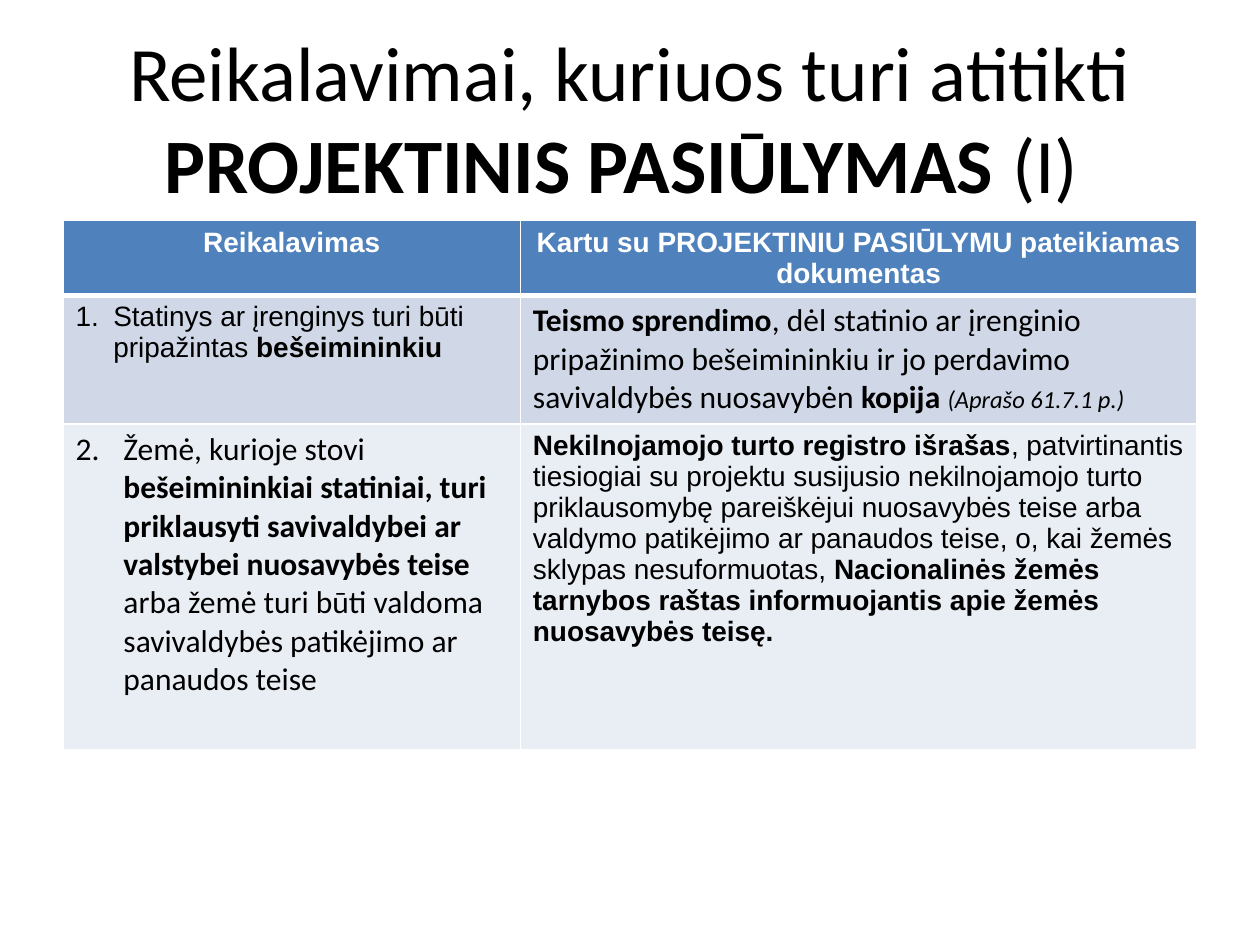
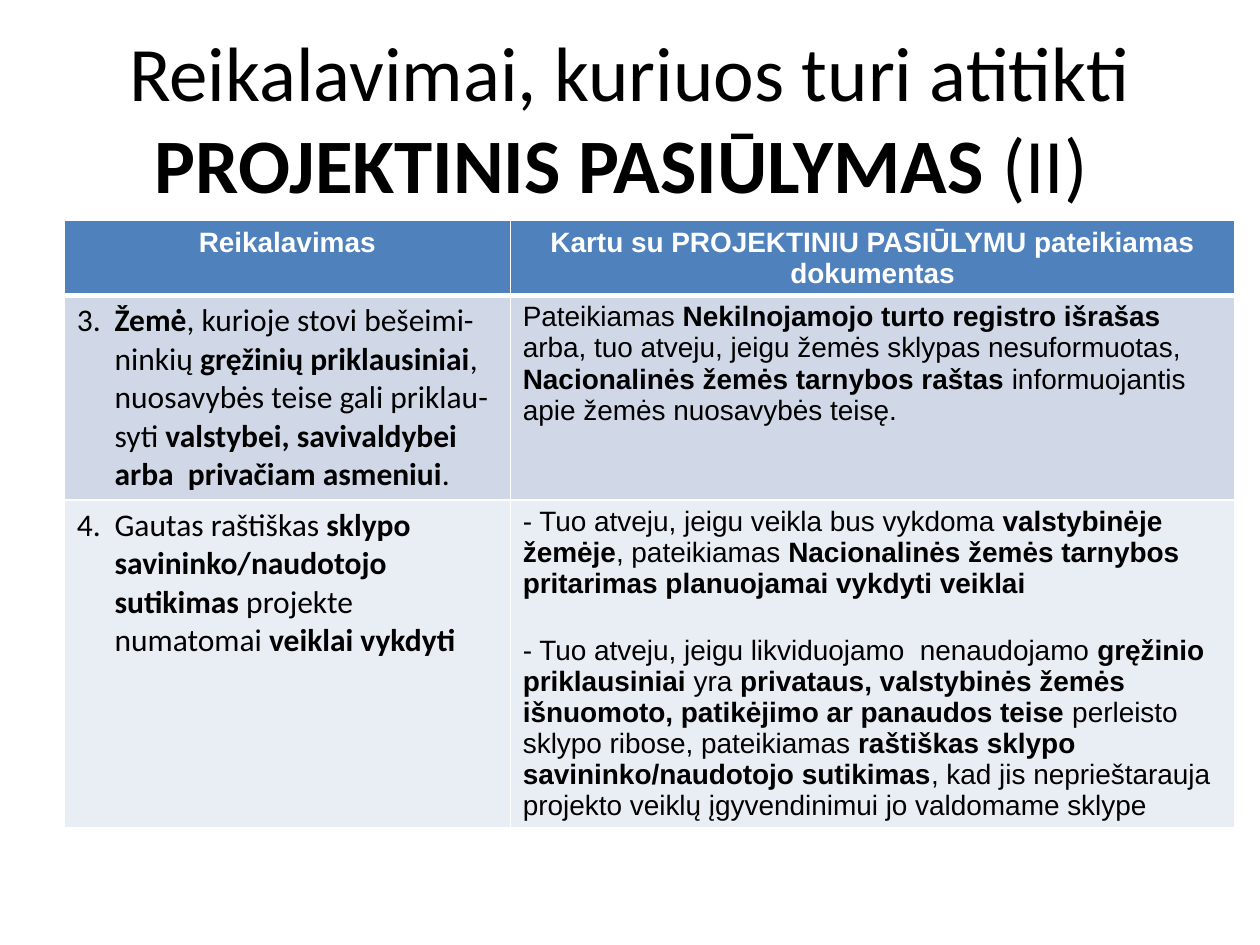
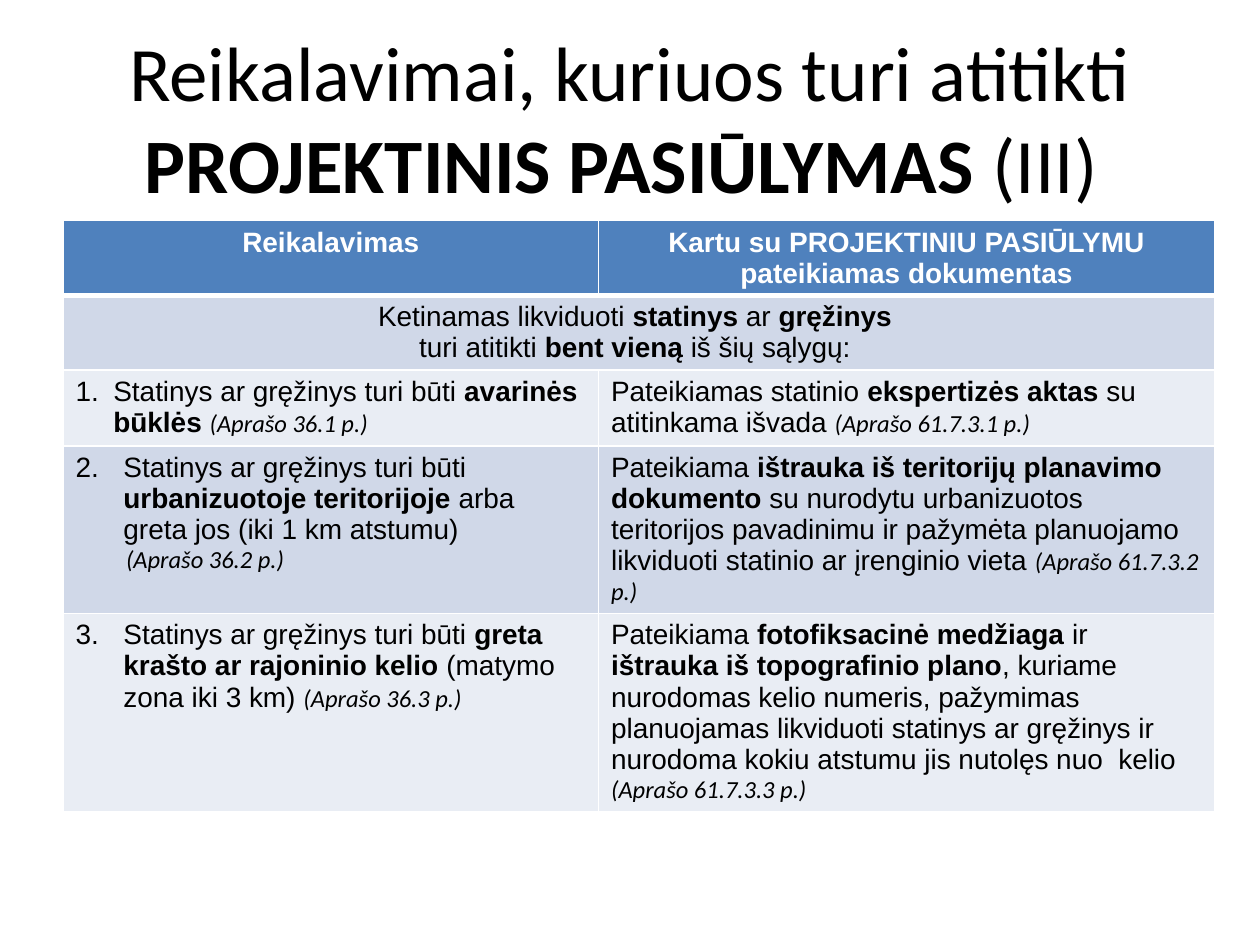
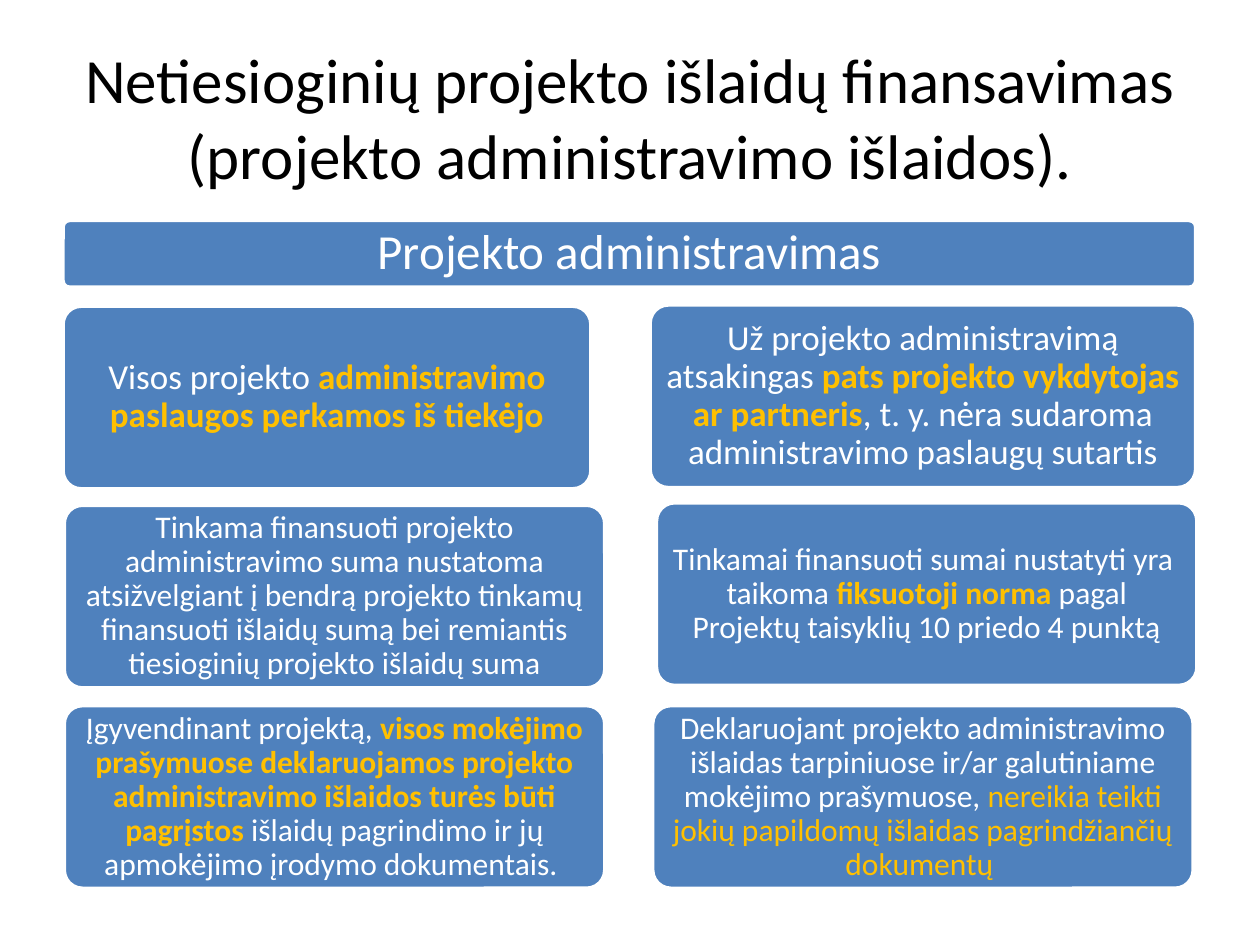
from dataclasses import dataclass
from itertools import zip_longest

from lxml.etree import SubElement
from pptx import Presentation
from pptx.dml.color import RGBColor
from pptx.enum.shapes import MSO_SHAPE
from pptx.enum.text import MSO_ANCHOR, MSO_AUTO_SIZE, PP_ALIGN
from pptx.oxml.ns import qn
from pptx.util import Inches, Pt

BLUE, GOLD, WHITE, BLACK = "4F81BD", "FFC000", "FFFFFF", "000000"
BANDS = ("D0D8E8", "E9EDF4")
HEADS = ("Reikalavimas", "Kartu su PROJEKTINIU PASIŪLYMU pateikiamas dokumentas")
HEAD_H = 0.58


@dataclass
class Para:
    """Cell text: |bold| parts, then an optional ^reference in small italics."""
    text: str
    font: str = "Arial"
    size: int = 16
    left: float = 0
    hang: float = 0
    start: int = 0
    before: int = 0
    align: PP_ALIGN = PP_ALIGN.LEFT


def wide(text, **more):
    return Para(text, "Calibri", 18, **more)


def typed(text, make=Para):
    """Item whose number is part of the text, set off with a tab."""
    return make(text, left=0.3, hang=0.3)


def auto(text, start, make=Para):
    return make(text, left=0.38, hang=0.38, start=start)


def mid(text):
    return Para(text, align=PP_ALIGN.CENTER)


def color(text):
    return RGBColor.from_string(text)


def style(font, name, size, tint):
    font.name, font.size = name, Pt(size)
    font.color.rgb = color(tint)


def add_runs(para, text, tint=None, bold=True):
    """Add the text, stressing every second part between bars."""
    for i, part in enumerate(text.split("|")):
        if not part:
            continue
        run = para.add_run()
        run.text = part
        if i % 2:
            run.font.bold = bold
            if tint:
                run.font.color.rgb = color(tint)


def add_title(slide, text, size=44):
    title = slide.shapes.title
    title.left, title.top = Inches(0.5), Inches(0.3)
    title.width, title.height = Inches(9), Inches(1.25)
    frame = title.text_frame
    frame.word_wrap, frame.auto_size = True, MSO_AUTO_SIZE.NONE
    frame.vertical_anchor = MSO_ANCHOR.MIDDLE
    para = frame.paragraphs[0]
    para.alignment = PP_ALIGN.CENTER
    style(para.font, "Calibri", size, BLACK)
    add_runs(para, text)


def write(para, item, tint):
    props = para._p.get_or_add_pPr()
    if item.left:
        props.set("marL", str(Inches(item.left)))
        props.set("indent", str(-Inches(item.hang)))
    if item.start:
        SubElement(props, qn("a:buAutoNum"), type="arabicPeriod",
                   startAt=str(item.start))
    para.alignment = item.align
    if item.before:
        para.space_before = Pt(item.before)
    style(para.font, item.font, item.size, tint)
    body, _, note = item.text.partition("^")
    add_runs(para, body)
    if note:
        run = para.add_run()
        run.text = note
        run.font.name, run.font.size = "Calibri", Pt(14)
        run.font.italic = True


def paint(cell, fill, top, low):
    """Give a cell white borders and a fill."""
    props = cell._tc.get_or_add_tcPr()
    for side, width in (("L", 1), ("R", 1), ("T", top), ("B", low)):
        line = SubElement(props, qn(f"a:ln{side}"), w=str(Pt(width)))
        solid = SubElement(line, qn("a:solidFill"))
        SubElement(solid, qn("a:srgbClr"), val=WHITE)
    cell.fill.solid()
    cell.fill.fore_color.rgb = color(fill)


def fill_cell(cell, items, tint):
    frame = cell.text_frame
    for i, item in enumerate(items):
        write(frame.add_paragraph() if i else frame.paragraphs[0], item, tint)


def add_table(slide, left, top, widths, rows):
    """Rows are (height, cells); a row with one cell spans both columns."""
    head = (HEAD_H, [[mid(f"|{text}|")] for text in HEADS])
    rows = [head, *rows]
    table = slide.shapes.add_table(
        len(rows), len(widths), Inches(left), Inches(top),
        Inches(sum(widths)), Inches(sum(row[0] for row in rows))).table
    for col, width in zip(table.columns, widths):
        col.width = Inches(width)
    for r, (height, cells) in enumerate(rows):
        table.rows[r].height = Inches(height)
        if len(cells) < len(widths):
            table.cell(r, 0).merge(table.cell(r, len(widths) - 1))
        for c, (_, items) in enumerate(zip_longest(widths, cells, fillvalue=())):
            cell = table.cell(r, c)
            fill = BANDS[(r - 1) % 2] if r else BLUE
            paint(cell, fill, 3 if r == 1 else 1, 1 if r else 3)
            fill_cell(cell, items, BLACK if r else WHITE)


def add_card(slide, box, text, size, inset, bold=True):
    card = slide.shapes.add_shape(MSO_SHAPE.ROUNDED_RECTANGLE, *map(Inches, box))
    card.adjustments[0] = 0.1
    card.shadow.inherit = False
    card.fill.solid()
    card.fill.fore_color.rgb = color(BLUE)
    card.line.color.rgb = color(WHITE)
    card.line.width = Pt(2)
    frame = card.text_frame
    frame.word_wrap, frame.vertical_anchor = True, MSO_ANCHOR.MIDDLE
    frame.margin_left = frame.margin_right = Inches(inset)
    frame.margin_top = frame.margin_bottom = Inches(inset)
    para = frame.paragraphs[0]
    para.alignment, para.line_spacing = PP_ALIGN.CENTER, 0.9
    style(para.font, "Calibri", size, WHITE)
    add_runs(para, text, GOLD, bold)


def need_slide(slide, part, left, widths, rows):
    add_title(slide, f"Reikalavimai, kuriuos turi atitikti |PROJEKTINIS PASIŪLYMAS |({part}) ")
    add_table(slide, left, 1.75, widths, rows)


def cost_slide(slide):
    add_title(slide, "Netiesioginių projekto išlaidų finansavimas "
              "(projekto administravimo išlaidos).", 36)
    add_card(slide, (0.5, 1.75, 8.99, 0.53), "Projekto administravimas", 28, 0.12)
    high = 1.45
    for left, top, width, size, text, bold in COSTS:
        add_card(slide, (left, top, width, high), text, size,
                 0.08 if size == 20 else 0.07, bold)


COSTS = (
    (0.5, 2.43, 4.19, 20,
     "Visos projekto |administravimo paslaugos perkamos iš tiekėjo", True),
    (0.51, 4.01, 4.29, 18,
     "Tinkama finansuoti projekto administravimo suma nustatoma atsižvelgiant "
     "į bendrą projekto tinkamų finansuoti išlaidų sumą bei remiantis "
     "tiesioginių projekto išlaidų suma", True),
    (0.51, 5.6, 4.29, 18,
     "Įgyvendinant projektą, |visos mokėjimo prašymuose deklaruojamos projekto "
     "administravimo išlaidos turės būti pagrįstos| išlaidų pagrindimo ir jų "
     "apmokėjimo įrodymo dokumentais. ", True),
    (5.16, 2.42, 4.33, 20,
     "Už projekto administravimą atsakingas |pats projekto vykdytojas ar "
     "partneris|, t. y. nėra sudaroma administravimo paslaugų sutartis", True),
    (5.21, 3.99, 4.29, 18,
     "Tinkamai finansuoti sumai nustatyti yra  taikoma |fiksuotoji norma |"
     "pagal Projektų taisyklių 10 priedo 4 punktą", True),
    (5.18, 5.6, 4.29, 18,
     "Deklaruojant projekto administravimo išlaidas tarpiniuose ir/ar "
     "galutiniame mokėjimo prašymuose, |nereikia teikti jokių papildomų "
     "išlaidas pagrindžiančių dokumentų ", False),
)

OWNER = (
    (1.02, [
        [typed("1.\tStatinys ar įrenginys turi būti pripažintas |bešeimininkiu")],
        [wide("|Teismo sprendimo|, dėl statinio ar įrenginio pripažinimo "
              "bešeimininkiu ir jo perdavimo savivaldybės nuosavybėn |kopija |"
              "^(Aprašo 61.7.1 p.)")]]),
    (2.59, [
        [auto("Žemė, kurioje stovi |bešeimininkiai statiniai, turi priklausyti "
              "savivaldybei ar valstybei nuosavybės teise |arba žemė turi būti "
              "valdoma savivaldybės patikėjimo ar panaudos teise", 2, wide)],
        [Para("|Nekilnojamojo turto registro išrašas|, patvirtinantis tiesiogiai "
              "su projektu susijusio nekilnojamojo turto priklausomybę "
              "pareiškėjui nuosavybės teise arba valdymo patikėjimo ar panaudos "
              "teise, o, kai žemės sklypas nesuformuotas, |Nacionalinės žemės "
              "tarnybos raštas informuojantis apie žemės nuosavybės teisę.")]]),
)

LAND = (
    (1.62, [
        [typed("3.\t|Žemė|, kurioje stovi bešeimi-ninkių |gręžinių "
               "priklausiniai|, nuosavybės teise gali priklau-syti |valstybei, "
               "savivaldybei arba  privačiam asmeniui|.", wide)],
        [Para("Pateikiamas |Nekilnojamojo turto registro išrašas| arba, tuo "
              "atveju, jeigu žemės sklypas nesuformuotas, |Nacionalinės žemės "
              "tarnybos raštas| informuojantis apie žemės nuosavybės teisę.")]]),
    (2.59, [
        [typed("4.\tGautas raštiškas |sklypo savininko/naudotojo sutikimas |"
               "projekte numatomai |veiklai vykdyti", wide)],
        [Para("- Tuo atveju, jeigu veikla bus vykdoma |valstybinėje žemėje|, "
              "pateikiamas |Nacionalinės žemės tarnybos pritarimas planuojamai "
              "vykdyti veiklai"),
         Para("- Tuo atveju, jeigu likviduojamo  nenaudojamo |gręžinio "
              "priklausiniai |yra |privataus, valstybinės žemės išnuomoto, "
              "patikėjimo ar panaudos teise| perleisto sklypo ribose, "
              "pateikiamas |raštiškas sklypo savininko/naudotojo sutikimas|, kad "
              "jis neprieštarauja projekto veiklų įgyvendinimui jo valdomame "
              "sklype", before=20)]]),
)

TERMS = (
    (0.59, [
        [mid("Ketinamas likviduoti |statinys| ar |gręžinys "),
         mid("turi atitikti |bent vieną |iš šių sąlygų: ")]]),
    (0.6, [
        [typed("1.\tStatinys ar gręžinys turi būti |avarinės būklės |^(Aprašo 36.1 p.)")],
        [Para("Pateikiamas statinio |ekspertizės aktas |su  atitinkama išvada "
              "^(Aprašo 61.7.3.1 p.)")]]),
    (1.33, [
        [auto("Statinys ar gręžinys turi būti |urbanizuotoje teritorijoje |arba "
              "greta jos (iki 1 km atstumu)", 2),
         Para("^(Aprašo 36.2 p.)", left=0.4)],
        [Para("Pateikiama |ištrauka iš teritorijų planavimo dokumento| su "
              "nurodytu urbanizuotos teritorijos pavadinimu ir pažymėta "
              "planuojamo likviduoti statinio ar įrenginio vieta "
              "^(Aprašo 61.7.3.2 p.)")]]),
    (1.57, [
        [auto("Statinys ar gręžinys turi būti |greta krašto ar rajoninio kelio |"
              "(matymo zona iki 3 km) ^(Aprašo 36.3 p.)", 3)],
        [Para("Pateikiama |fotofiksacinė medžiaga| ir |ištrauka iš topografinio "
              "plano|, kuriame nurodomas kelio numeris, pažymimas planuojamas "
              "likviduoti statinys ar gręžinys ir nurodoma kokiu atstumu jis "
              "nutolęs nuo  kelio"),
         Para("^(Aprašo 61.7.3.3 p.)")]]),
)


def main():
    deck = Presentation()
    deck.slide_width, deck.slide_height = Inches(10), Inches(7.5)
    plain = deck.slide_layouts[5]
    for part, left, widths, rows in (("I", 0.5, (3.63, 5.37), OWNER),
                                     ("II", 0.51, (3.54, 5.75), LAND),
                                     ("III", 0.5, (4.25, 4.89), TERMS)):
        need_slide(deck.slides.add_slide(plain), part, left, widths, rows)
    cost_slide(deck.slides.add_slide(plain))
    deck.save("out.pptx")


if __name__ == "__main__":
    main()
